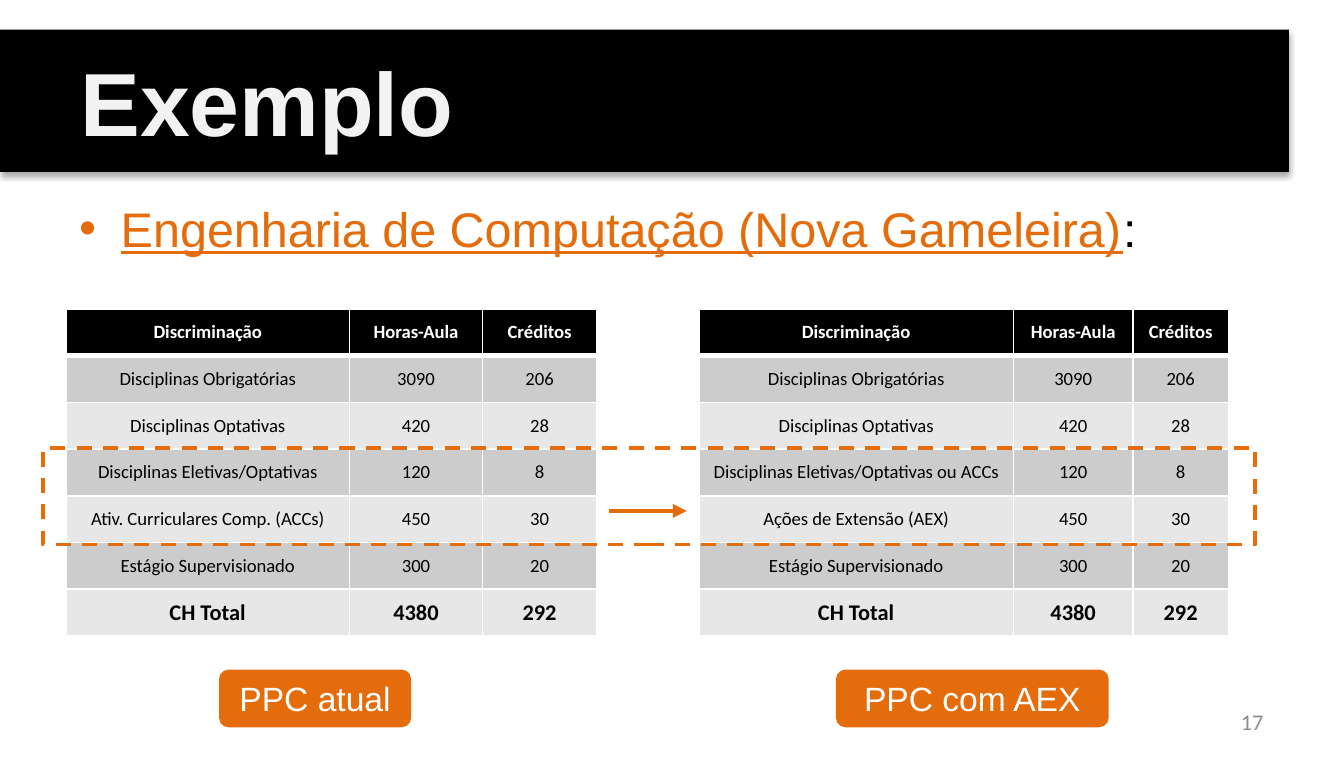
from lxml.etree import SubElement
from pptx import Presentation
from pptx.dml.color import RGBColor
from pptx.enum.dml import MSO_LINE
from pptx.enum.shapes import MSO_CONNECTOR, MSO_SHAPE
from pptx.enum.text import MSO_ANCHOR, PP_ALIGN
from pptx.oxml.ns import qn
from pptx.util import Inches, Pt

COLORS = {"black": "000000", "white": "FFFFFF", "title": "F2F2F2", "orange": "E46C0A",
          "odd_row": "CCCCCC", "even_row": "E7E7E7", "page": "8C8C8C"}

TITLE = "Exemplo"
COURSE = "Engenharia de Computação (Nova Gameleira)"
PAGE = "17"
HEADER = ("Discriminação", "Horas-Aula", "Créditos")
REQUIRED = [("Disciplinas Obrigatórias", "3090", "206"), ("Disciplinas Optativas", "420", "28")]
CLOSING = [("Estágio Supervisionado", "300", "20"), ("CH Total", "4380", "292")]
PLANS = [
    {"left": 0.49, "columns": (2.11, 0.99, 0.85),
     "changed": [("Disciplinas Eletivas/Optativas", "120", "8"),
                 ("Ativ. Curriculares Comp. (ACCs)", "450", "30")],
     "label": "PPC atual", "label_left": 1.63, "label_width": 1.43},
    {"left": 5.2, "columns": (2.34, 0.89, 0.71),
     "changed": [("Disciplinas Eletivas/Optativas ou ACCs", "120", "8"),
                 ("Ações de Extensão (AEX)", "450", "30")],
     "label": "PPC com AEX", "label_left": 6.22, "label_width": 2.03},
]
TABLE_TOP, TABLE_HEIGHT = 2.3, 2.43


def rgb(name):
    return RGBColor.from_string(COLORS[name])


def add_run(paragraph, text, size, color, font="Arial", bold=False, underline=False):
    run = paragraph.add_run()
    run.text = text
    run.font.size, run.font.name = Pt(size), font
    run.font.bold, run.font.underline = bold, underline
    run.font.color.rgb = rgb(color)


def add_box(slide, kind, left, top, width, height, fill=None):
    box = slide.shapes.add_shape(kind, Inches(left), Inches(top), Inches(width), Inches(height))
    box.shadow.inherit = False
    if fill:
        box.fill.solid()
        box.fill.fore_color.rgb = rgb(fill)
    else:
        box.fill.background()
    box.line.fill.background()
    box.text_frame.vertical_anchor = MSO_ANCHOR.MIDDLE
    return box


def add_text(slide, left, top, width, height):
    frame = slide.shapes.add_textbox(
        Inches(left), Inches(top), Inches(width), Inches(height)).text_frame
    frame.word_wrap = True
    return frame


def indent(paragraph, left, first=0):
    props = paragraph._p.get_or_add_pPr()
    props.set("marL", str(Inches(left)))
    props.set("indent", str(Inches(first)))
    return props


def add_color(parent, color):
    return SubElement(SubElement(parent, qn("a:solidFill")), qn("a:srgbClr"), val=COLORS[color])


def add_title(slide):
    banner = add_box(slide, MSO_SHAPE.RECTANGLE, 0, 0.22, 9.59, 1.06, "black")
    effects = banner._element.spPr.find(qn("a:effectLst"))
    shadow = SubElement(effects, qn("a:outerShdw"), blurRad=str(Pt(3.1)), dist=str(Pt(1.8)),
                        dir="5400000", algn="t", rotWithShape="0")
    shade = SubElement(shadow, qn("a:srgbClr"), val=COLORS["black"])
    SubElement(shade, qn("a:alpha"), val="35000")
    paragraph = banner.text_frame.paragraphs[0]
    paragraph.alignment = PP_ALIGN.LEFT
    indent(paragraph, 0.5)
    add_run(paragraph, TITLE, 48, "title", bold=True)


def add_course(slide):
    paragraph = add_text(slide, 0.49, 1.43, 9.22, 1.18).paragraphs[0]
    paragraph.alignment = PP_ALIGN.JUSTIFY
    props = indent(paragraph, 0.31, -0.31)
    SubElement(SubElement(props, qn("a:buClr")), qn("a:srgbClr"), val=COLORS["orange"])
    SubElement(props, qn("a:buFont"), typeface="Arial")
    SubElement(props, qn("a:buChar"), char="•")
    add_run(paragraph, COURSE, 26, "orange", underline=True)
    add_run(paragraph, ":", 26, "black")


def add_borders(cell, bottom):
    """Borders must precede the fill in the cell properties, so call this before filling."""
    props = cell._tc.get_or_add_tcPr()
    for side, width in (("lnL", 1), ("lnR", 1), ("lnT", 1), ("lnB", bottom)):
        add_color(SubElement(props, qn(f"a:{side}"), w=str(Pt(width))), "white")


def add_plan(slide, plan):
    rows = [HEADER, *REQUIRED, *plan["changed"], *CLOSING]
    table = slide.shapes.add_table(
        len(rows), len(HEADER), Inches(plan["left"]), Inches(TABLE_TOP),
        Inches(sum(plan["columns"])), Inches(TABLE_HEIGHT)).table
    for column, width in zip(table.columns, plan["columns"]):
        column.width = Inches(width)
    for r, values in enumerate(rows):
        header, total = r == 0, r == len(rows) - 1
        fill = "black" if header else "odd_row" if r % 2 else "even_row"
        for c, value in enumerate(values):
            cell = table.cell(r, c)
            add_borders(cell, bottom=3 if header else 1)
            cell.fill.solid()
            cell.fill.fore_color.rgb = rgb(fill)
            cell.vertical_anchor = MSO_ANCHOR.MIDDLE
            paragraph = cell.text_frame.paragraphs[0]
            paragraph.alignment = PP_ALIGN.CENTER
            add_run(paragraph, value, 12 if total else 10, "white" if header else "black",
                    "Calibri", bold=header or total)

    label = add_box(slide, MSO_SHAPE.ROUNDED_RECTANGLE, plan["label_left"], 4.98,
                    plan["label_width"], 0.43, "orange")
    paragraph = label.text_frame.paragraphs[0]
    paragraph.alignment = PP_ALIGN.CENTER
    add_run(paragraph, plan["label"], 18, "white")


def add_arrow(slide):
    arrow = slide.shapes.add_connector(
        MSO_CONNECTOR.STRAIGHT, Inches(4.53), Inches(3.8), Inches(5.11), Inches(3.8))
    arrow.line.color.rgb = rgb("orange")
    arrow.line.width = Pt(2.5)
    SubElement(arrow.line._get_or_add_ln(), qn("a:tailEnd"), type="triangle")
    SubElement(arrow._element.spPr, qn("a:effectLst"))


def add_highlight(slide):
    frame = add_box(slide, MSO_SHAPE.RECTANGLE, 0.32, 3.33, 9.02, 0.72)
    frame.line.color.rgb = rgb("orange")
    frame.line.width = Pt(2)
    frame.line.dash_style = MSO_LINE.DASH


def add_page_number(slide):
    frame = add_text(slide, 7.17, 5.22, 2.33, 0.3)
    frame.vertical_anchor = MSO_ANCHOR.MIDDLE
    frame.paragraphs[0].alignment = PP_ALIGN.RIGHT
    add_run(frame.paragraphs[0], PAGE, 12, "page", "Calibri")


def main():
    deck = Presentation()
    deck.slide_width, deck.slide_height = Inches(10), Inches(5.63)
    slide = deck.slides.add_slide(deck.slide_layouts[6])
    add_page_number(slide)
    add_title(slide)
    add_course(slide)
    for plan in PLANS:
        add_plan(slide, plan)
    add_arrow(slide)
    add_highlight(slide)
    deck.save("out.pptx")


if __name__ == "__main__":
    main()
